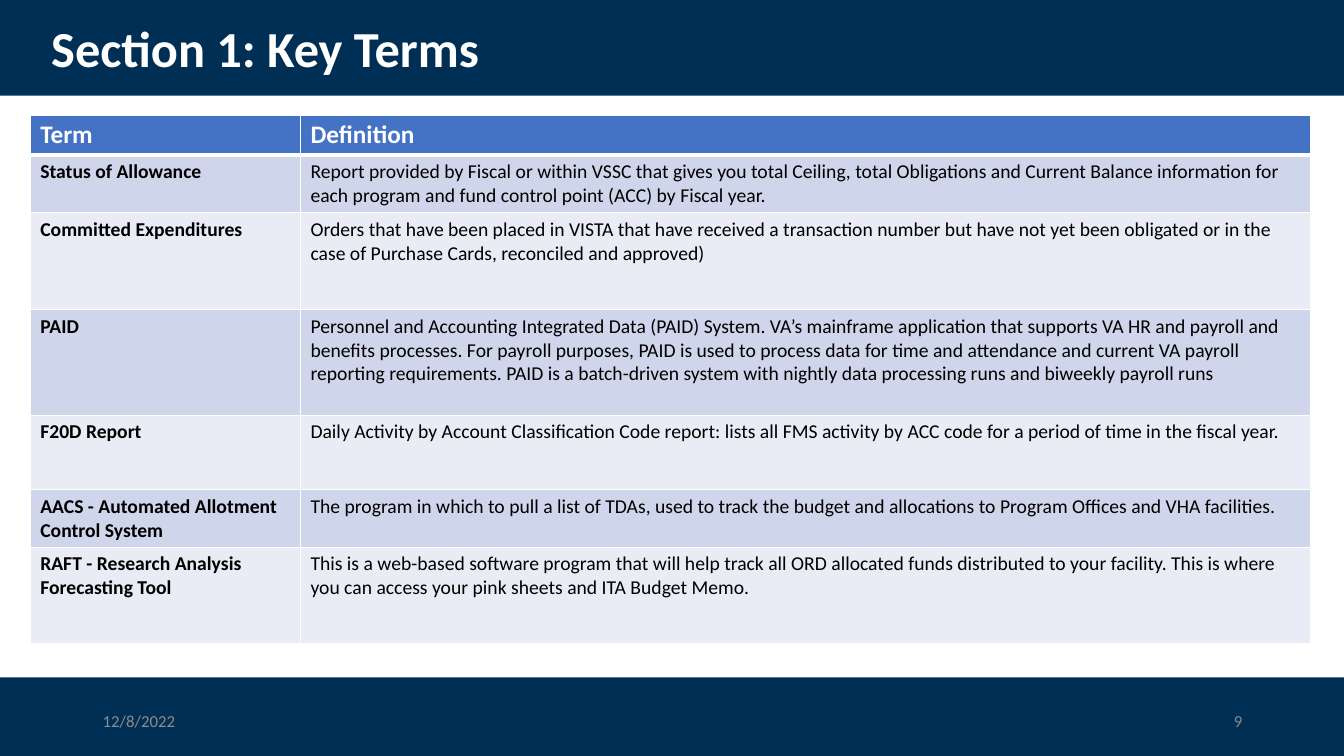
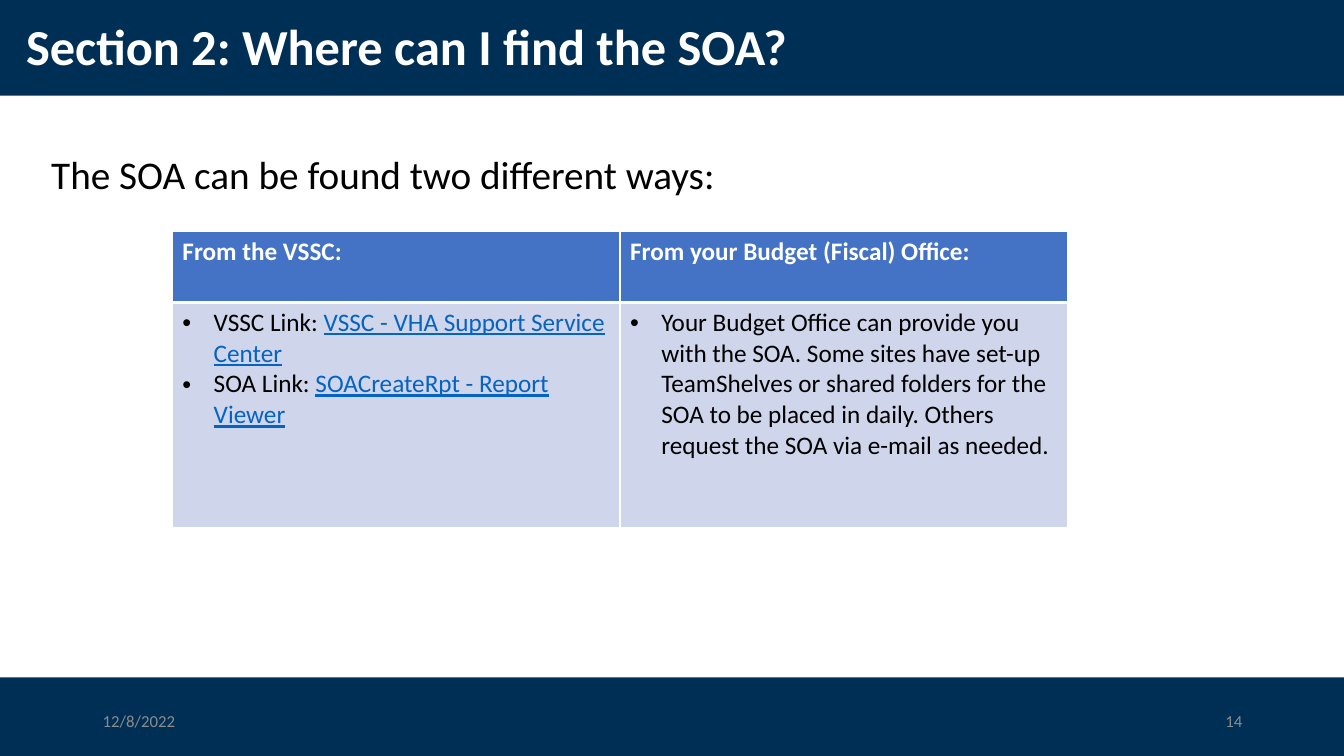
from pptx import Presentation
from pptx.dml.color import RGBColor
from pptx.enum.shapes import MSO_SHAPE as Shape
from pptx.enum.text import MSO_ANCHOR as Anchor, PP_ALIGN as Align
from pptx.oxml import parse_xml
from pptx.oxml.ns import nsdecls
from pptx.util import Inches, Pt

# Shared look
WIDE, HIGH = 13.33, 7.5
FONT = "Calibri"
NAVY, BLUE, WHITE, BLACK = "002F56", "4472C4", "FFFFFF", "000000"
GREY, LINK = "8C8C8C", "0563C1"
STRIPES = ["CFD5EA", "E9EBF5"]
BANDS = [(0, 0.95), (6.72, 0.8)]  # top, height
TITLE = {"size": 36, "bold": True, "color": WHITE}
LEAD = {"size": 28, "color": BLACK}
FOOT = {"size": 12, "color": GREY}
HEAD = {"size": 18, "bold": True, "color": WHITE}
TERM = {"size": 14, "bold": True, "color": BLACK}
TEXT = {"size": 14, "bold": False, "color": BLACK}
ITEM = {"size": 18, "bold": False, "color": BLACK}
URL = {"size": 18, "bold": False, "color": LINK, "underline": True}
DATE = "12/8/2022"

# Slide content
TERMS = [
    ("Term", "Definition"),
    ("Status of Allowance",
     "Report provided by Fiscal or within VSSC that gives you total Ceiling, "
     "total Obligations and Current Balance information for each program and "
     "fund control point (ACC) by Fiscal year."),
    ("Committed Expenditures",
     "Orders that have been placed in VISTA that have received a transaction "
     "number but have not yet been obligated or in the case of Purchase Cards, "
     "reconciled and approved)"),
    ("PAID",
     "Personnel and Accounting Integrated Data (PAID) System. VA’s mainframe "
     "application that supports VA HR and payroll and benefits processes. For "
     "payroll purposes, PAID is used to process data for time and attendance "
     "and current VA payroll reporting requirements. PAID is a batch-driven "
     "system with nightly data processing runs and biweekly payroll runs"),
    ("F20D Report",
     "Daily Activity by Account Classification Code report: lists all FMS "
     "activity by ACC code for a period of time in the fiscal year."),
    ("AACS - Automated Allotment Control System",
     "The program in which to pull a list of TDAs, used to track the budget "
     "and allocations to Program Offices and VHA facilities."),
    ("RAFT - Research Analysis Forecasting Tool",
     "This is a web-based software program that will help track all ORD "
     "allocated funds distributed to your facility. This is where you can "
     "access your pink sheets and ITA Budget Memo."),
]
WAYS = ["From the VSSC:", "From your Budget (Fiscal) Office:"]
LINKS = [
    ("VSSC Link: ", "VSSC - VHA Support Service Center"),
    ("SOA Link: ", "SOACreateRpt - Report Viewer"),
]
OFFICE = ("Your Budget Office can provide you with the SOA. Some sites have "
          "set-up TeamShelves or shared folders for the SOA to be placed in "
          "daily. Others request the SOA via e-mail as needed.")


def rgb(code):
    return RGBColor.from_string(code)


def paint(shape, code):
    shape.fill.solid()
    shape.fill.fore_color.rgb = rgb(code)


def write(frame, paras, bullet=False, align=Align.LEFT, space=1.0):
    """Fill a frame; each paragraph is a list of (text, style) runs."""
    for i, runs in enumerate(paras):
        para = frame.paragraphs[0] if i == 0 else frame.add_paragraph()
        para.alignment, para.line_spacing = align, space
        if bullet:
            props = para._p.get_or_add_pPr()
            props.set("marL", str(Inches(0.31)))
            props.set("indent", str(-Inches(0.31)))
            for tag in ('buFont %s typeface="Arial"', 'buChar %s char="•"'):
                props.append(parse_xml(f"<a:{tag % nsdecls('a')}/>"))
        for text, style in runs:
            run = para.add_run()
            run.text = text
            run.font.name = FONT
            for key, value in style.items():
                if key == "color":
                    run.font.color.rgb = rgb(value)
                else:
                    setattr(run.font, key, Pt(value) if key == "size" else value)


def label(slide, area, text, style, anchor=Anchor.MIDDLE, **look):
    frame = slide.shapes.add_textbox(*map(Inches, area)).text_frame
    frame.word_wrap, frame.vertical_anchor = True, anchor
    write(frame, [[(text, style)]], **look)


def edge(cell, row):
    """White cell borders, with a thick rule under the header."""
    props = cell._tc.get_or_add_tcPr()
    thick = {0: "B", 1: "T"}.get(row)
    for side in "LRTB":
        width = Pt(3 if side == thick else 1)
        props.append(parse_xml(
            f'<a:ln{side} {nsdecls("a")} w="{width}"><a:solidFill>'
            f'<a:srgbClr val="{WHITE}"/></a:solidFill></a:ln{side}>'))


def grid(slide, left, top, cols, rows, cells, bullet=False):
    """Draw a table; each cell is a list of paragraphs."""
    area = map(Inches, (left, top, sum(cols), sum(rows)))
    table = slide.shapes.add_table(len(rows), len(cols), *area).table
    for col, width in zip(table.columns, cols):
        col.width = Inches(width)
    for r, line in enumerate(cells):
        table.rows[r].height = Inches(rows[r])
        for c, paras in enumerate(line):
            cell = table.cell(r, c)
            edge(cell, r)
            paint(cell, STRIPES[(r - 1) % 2] if r else BLUE)
            write(cell.text_frame, paras, bullet=bullet and r > 0)


def page(deck, title, area, number):
    """Start a slide with bands, title and footer."""
    slide = deck.slides.add_slide(deck.slide_layouts[6])
    for top, height in BANDS:
        band = slide.shapes.add_shape(
            Shape.RECTANGLE, *map(Inches, (0, top, WIDE, height)))
        band.shadow.inherit = False
        band.line.fill.background()
        paint(band, NAVY)
    label(slide, area, title, TITLE, space=0.9)
    label(slide, (0.92, 6.95, 3, 0.4), DATE, FOOT)
    label(slide, (9.42, 6.95, 3, 0.4), str(number), FOOT, align=Align.RIGHT)
    return slide


def main():
    deck = Presentation()
    deck.slide_width, deck.slide_height = Inches(WIDE), Inches(HIGH)

    # Key terms
    slide = page(deck, "Section 1: Key Terms", (0.41, 0.12, 11.89, 0.77), 9)
    cells = []
    for r, pair in enumerate(TERMS):
        styles = (TERM, TEXT) if r else (HEAD, HEAD)
        cells.append([[[run]] for run in zip(pair, styles)])
    grid(slide, 0.3, 1.14, [2.68, 10.02],
         [0.4, 0.57, 0.96, 1.05, 0.74, 0.57, 0.96], cells)

    # Two ways to find the SOA
    slide = page(deck, "Section 2: Where can I find the SOA?",
                 (0.16, 0.15, 12.69, 0.68), 14)
    label(slide, (0.41, 1.49, 11.5, 4.76),
          "The SOA can be found two different ways:", LEAD,
          anchor=Anchor.TOP, space=0.9)
    links = [[(name, ITEM), (target, URL)] for name, target in LINKS]
    cells = [[[[(way, HEAD)]] for way in WAYS], [links, [[(OFFICE, ITEM)]]]]
    grid(slide, 1.71, 2.3, [4.44] * 2, [0.7, 2.23], cells, bullet=True)

    deck.save("out.pptx")


if __name__ == "__main__":
    main()
